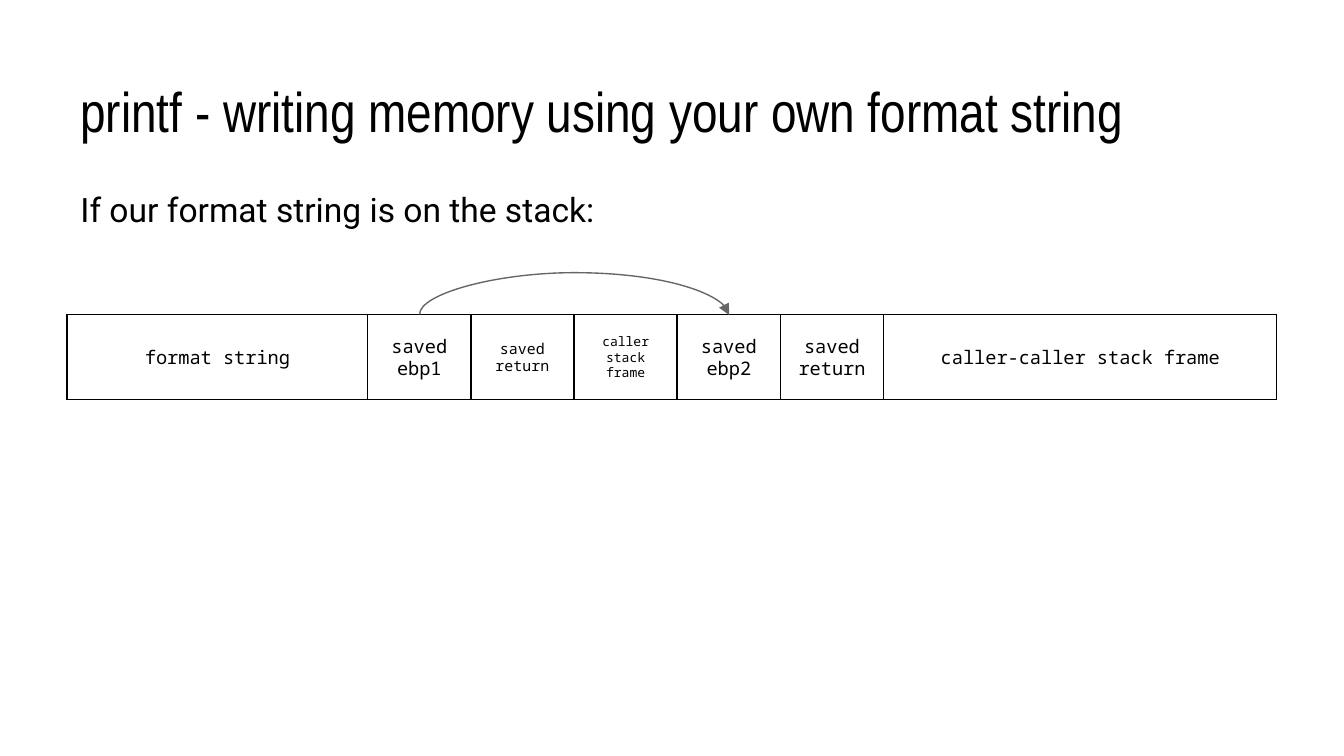
from pptx import Presentation
from pptx.dml.color import RGBColor
from pptx.enum.shapes import MSO_CONNECTOR as Connector, MSO_SHAPE as Shape
from pptx.enum.text import MSO_ANCHOR as Anchor, MSO_AUTO_SIZE as AutoSize, PP_ALIGN as Align
from pptx.oxml.ns import qn
from pptx.util import Cm, Pt
from lxml.etree import SubElement

BLACK = RGBColor(0x00, 0x00, 0x00)
GRAY = RGBColor(0x66, 0x66, 0x66)

LEFT, WIDTH = 1.27, 22.86
INSET = 0.25
CELLS = [
    ("format string", 5.68, 10),
    ("saved ebp1", 1.95, 10),
    ("saved return", 1.95, 8),
    ("caller stack frame", 1.95, 7),
    ("saved ebp2", 1.95, 10),
    ("saved return", 1.95, 10),
    ("caller-caller stack frame", 7.43, 10),
]


def write_text(shape, text, font_name, size, anchor, align):
    frame = shape.text_frame
    frame.text = text
    frame.word_wrap = True
    frame.auto_size = AutoSize.NONE
    frame.vertical_anchor = anchor
    frame.margin_left = frame.margin_right = Cm(INSET)
    frame.margin_top = frame.margin_bottom = Cm(INSET)
    para = frame.paragraphs[0]
    para.alignment = align
    font = para.runs[0].font
    font.name = font_name
    font.size = Pt(size)
    font.color.rgb = BLACK
    return para


def fill_placeholder(placeholder, box, text, font_name, size, anchor):
    placeholder.left, placeholder.top, placeholder.width, placeholder.height = map(Cm, box)
    return write_text(placeholder, text, font_name, size, anchor, Align.LEFT)


def add_heading(slide, box):
    fill_placeholder(slide.shapes.title, box,
                     "printf - writing memory using your own format string",
                     "Arial Narrow", 30, Anchor.BOTTOM)


def add_body(slide, box):
    para = fill_placeholder(slide.placeholders[1], box,
                            "If our format string is on the stack:",
                            "Roboto", 18, Anchor.TOP)
    para.space_before = Pt(6)
    properties = para._p.get_or_add_pPr()
    properties.set("marL", "0")
    properties.set("indent", "0")
    SubElement(properties, qn("a:buNone"))


def add_frame(slide, left, top, width, height):
    frame = slide.shapes.add_shape(Shape.RECTANGLE, Cm(left), Cm(top), Cm(width), Cm(height))
    frame.shadow.inherit = False
    frame.fill.background()
    frame.line.color.rgb = BLACK
    frame.line.width = Pt(0.75)
    return frame


def add_stack(slide, box):
    left, top, width, height = box
    add_frame(slide, left, top, width, height)
    centers = []
    for text, cell_width, size in CELLS:
        cell = add_frame(slide, left, top, cell_width, height)
        write_text(cell, text, "Noto Sans Mono", size, Anchor.MIDDLE, Align.CENTER)
        centers.append(left + cell_width / 2)
        left += cell_width
    add_arc_arrow(slide, centers[1], centers[4], top, 0.79)


def add_arc_arrow(slide, start, end, base, rise):
    thickness = 0.01
    middle, half = (start + end) / 2, (end - start) / 2
    arrow = slide.shapes.add_connector(
        Connector.CURVE, Cm(middle), Cm(base - half), Cm(middle + thickness), Cm(base + half))
    arrow.line.color.rgb = GRAY
    arrow.line.width = Pt(0.75)
    properties = arrow._element.spPr
    transform = properties.find(qn("a:xfrm"))
    transform.set("rot", str(270 * 60000))
    transform.set("flipH", "1")
    adjustments = properties.find(qn("a:prstGeom")).get_or_add_avLst()
    bend = round(-rise / thickness * 100000)
    SubElement(adjustments, qn("a:gd"), name="adj1", fmla=f"val {bend}")
    SubElement(arrow.line._get_or_add_ln(), qn("a:tailEnd"), type="triangle")
    SubElement(properties, qn("a:effectLst"))


def main():
    deck = Presentation()
    deck.slide_width, deck.slide_height = Cm(25.4), Cm(14.29)
    slide = deck.slides.add_slide(deck.slide_layouts[1])
    add_heading(slide, (LEFT, 0.58, WIDTH, 2.39))
    add_body(slide, (LEFT, 3.33, WIDTH, 10.34))
    add_stack(slide, (LEFT, 5.95, WIDTH, 1.6))
    deck.save("out.pptx")


if __name__ == "__main__":
    main()
